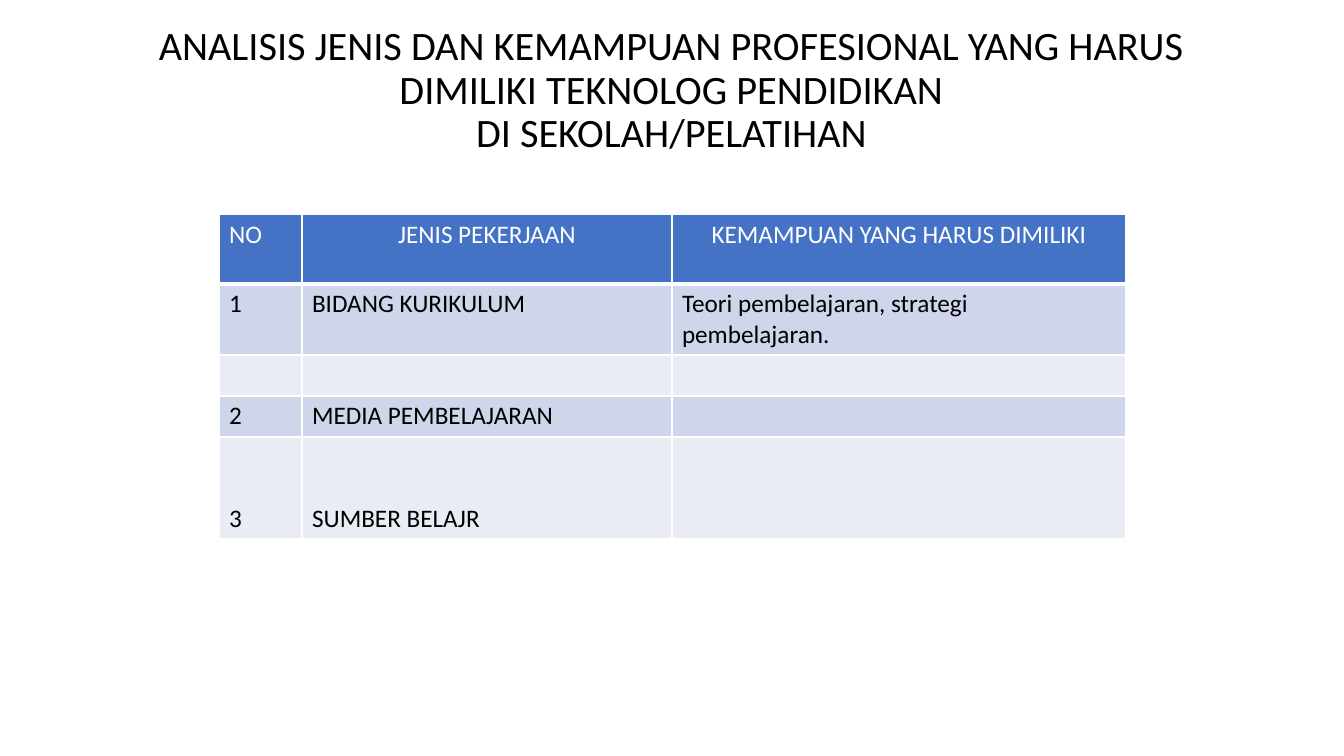
from lxml.etree import SubElement
from pptx import Presentation
from pptx.dml.color import RGBColor
from pptx.enum.text import MSO_ANCHOR, PP_ALIGN
from pptx.oxml.ns import qn
from pptx.util import Pt

PX = 914400 / 100.8
WHITE, BLACK, BLUE = "FFFFFF", "000000", "4472C4"
BANDS = ["CFD5EA", "E9EBF5"]


def px(n):
    return round(n * PX)


def rgb(value):
    return RGBColor.from_string(value)


class SlideBuilder:
    font = "Calibri"

    def __init__(self, prs):
        self.s = prs.slides.add_slide(prs.slide_layouts[6])

    def paragraph(self, tf, text, size, color, **paragraph_format):
        p = tf.paragraphs[0]
        p.text = text
        for name, value in paragraph_format.items():
            setattr(p, name, value)
        for r in p.runs:
            style = {"name": self.font, "size": Pt(size), "bold": False}
            for name, value in style.items():
                setattr(r.font, name, value)
            r.font.color.rgb = rgb(color)

    def text(self, box, text, size, color, frame_format, **paragraph_format):
        tf = self.s.shapes.add_textbox(*map(px, box)).text_frame
        for name, value in frame_format.items():
            setattr(tf, name, value)
        self.paragraph(tf, text, size, color, **paragraph_format)

    def borders(self, cell, widths):
        tc_pr = cell._tc.get_or_add_tcPr()
        for side, width in zip("LRTB", widths):
            ln = SubElement(tc_pr, qn(f"a:ln{side}"), w=str(Pt(width)))
            fill = SubElement(ln, qn("a:solidFill"))
            SubElement(fill, qn("a:srgbClr"), val=WHITE)

    def table(self, left, top, widths, heights, rows):
        box = map(px, (left, top, sum(widths), sum(heights)))
        table = self.s.shapes.add_table(len(rows), len(widths), *box).table
        table.first_row = table.horz_banding = False
        for col, width in zip(table.columns, widths):
            col.width = px(width)
        for row, height in zip(table.rows, heights):
            row.height = px(height)
        for i, row in enumerate(rows):
            header, last = i == 0, i == len(rows) - 1
            for j, text in enumerate(row):
                cell = table.cell(i, j)
                self.borders(cell, (1, 1, 1, 3 if header else 1))
                cell.fill.solid()
                cell.fill.fore_color.rgb = rgb(BLUE if header else BANDS[(i - 1) % 2])
                cell.vertical_anchor = MSO_ANCHOR.BOTTOM if last else MSO_ANCHOR.TOP
                align = PP_ALIGN.CENTER if header and j else PP_ALIGN.LEFT
                self.paragraph(cell.text_frame, text, 18,
                               WHITE if header else BLACK, alignment=align)


def main():
    prs = Presentation()
    prs.slide_width, prs.slide_height = px(1344), px(756)
    slide = SlideBuilder(prs)

    # Title, raised by a deeper bottom inset
    slide.text((92, 40, 1159, 146),
               "ANALISIS JENIS DAN KEMAMPUAN PROFESIONAL YANG HARUS "
               "DIMILIKI TEKNOLOG PENDIDIKAN\vDI SEKOLAH/PELATIHAN",
               28.8, BLACK,
               {"word_wrap": True, "vertical_anchor": MSO_ANCHOR.MIDDLE,
                "margin_bottom": px(49)},
               alignment=PP_ALIGN.CENTER, line_spacing=0.9)

    # Table of jobs and abilities
    slide.table(219, 214, [83, 370, 454], [70, 71, 41, 41, 102], [
        ["NO", "JENIS PEKERJAAN", "KEMAMPUAN YANG HARUS DIMILIKI"],
        ["1", "BIDANG KURIKULUM", "Teori pembelajaran, strategi pembelajaran."],
        ["", "", ""],
        ["2", "MEDIA PEMBELAJARAN", ""],
        ["3", "SUMBER BELAJR", ""],
    ])

    prs.save("out.pptx")


if __name__ == "__main__":
    main()
